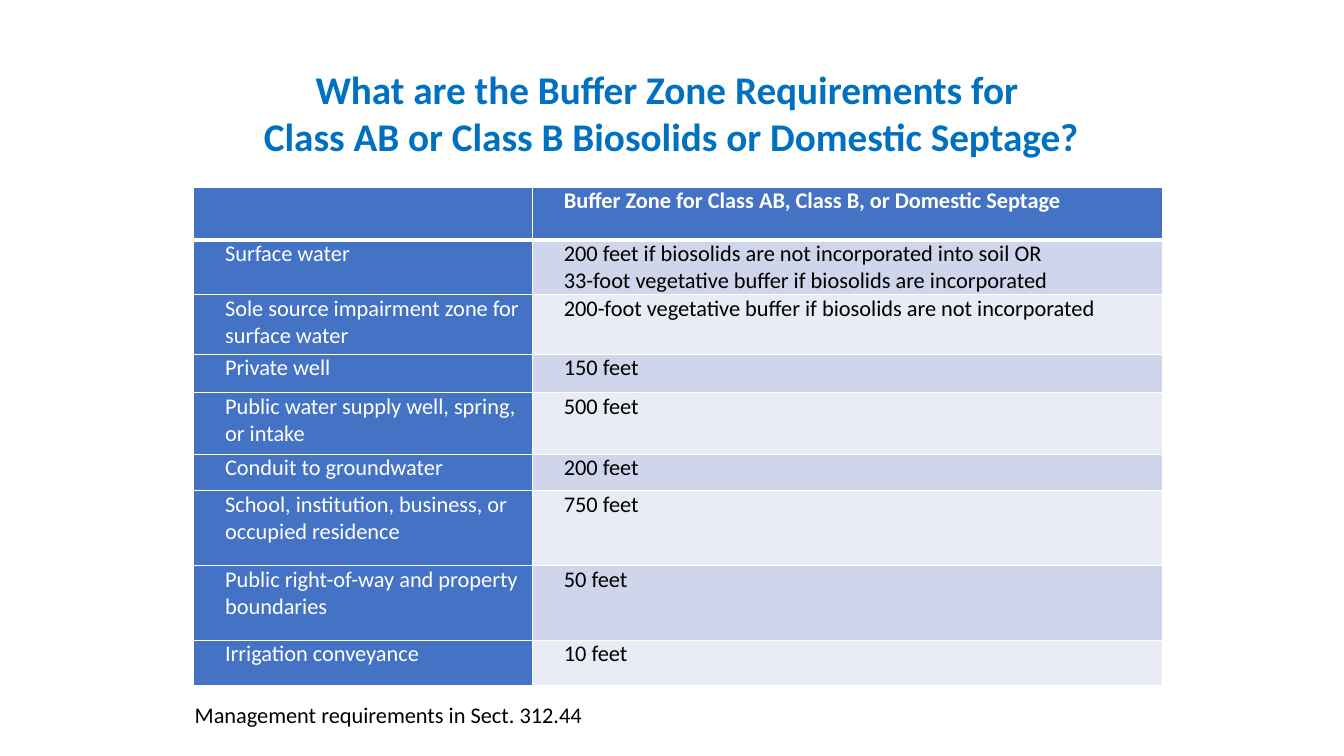
"""Build the slide on buffer zone requirements."""
from lxml import etree
from pptx import Presentation
from pptx.dml.color import RGBColor
from pptx.enum.text import MSO_ANCHOR, MSO_AUTO_SIZE, PP_ALIGN
from pptx.oxml.ns import qn
from pptx.util import Pt

MIDDLE, TOP = MSO_ANCHOR.MIDDLE, MSO_ANCHOR.TOP
FIXED = MSO_AUTO_SIZE.NONE
CENTER, LEFT = PP_ALIGN.CENTER, PP_ALIGN.LEFT

FONT = "Calibri"
WHITE, BLACK, AZURE, BLUE = "FFFFFF", "000000", "0070C0", "4472C4"
BANDS = ["CFD5EA", "E9EBF5"]

TITLE = ["What are the Buffer Zone Requirements for ",
         "Class AB or Class B Biosolids or Domestic Septage?"]
NOTE = "Management requirements in Sect. 312.44"
ROWS = [
    (38, "", ["Buffer Zone for Class AB, Class B, or Domestic Septage"]),
    (38, "Surface water",
     ["200 feet if biosolids are not incorporated into soil OR",
      "33-foot vegetative buffer if biosolids are incorporated"]),
    (42.5, "Sole source impairment zone for surface water",
     ["200-foot vegetative buffer if biosolids are not incorporated"]),
    (27.5, "Private well", ["150 feet"]),
    (44, "Public water supply well, spring, or intake", ["500 feet"]),
    (26, "Conduit to groundwater", ["200 feet"]),
    (53.5, "School, institution, business, or occupied residence", ["750 feet"]),
    (53.5, "Public right-of-way and property boundaries", ["50 feet"]),
    (32, "Irrigation conveyance", ["10 feet"]),
]
COLS = [242, 450]


def rgb(code):
    """Turn a hex string into a colour."""
    return RGBColor.from_string(code)


def write(para, text, size, color, bold=False):
    """Add one formatted run."""
    run = para.add_run()
    run.text = text
    font = run.font
    font.name, font.size, font.bold = FONT, Pt(size), bold
    font.color.rgb = rgb(color)


def edge(cell, low):
    """Draw white borders, with the given width below."""
    props = cell._tc.get_or_add_tcPr()
    for i, (side, width) in enumerate([("L", 1), ("R", 1), ("T", 1), ("B", low)]):
        line = etree.Element(qn("a:ln" + side), w=str(Pt(width)))
        fill = etree.SubElement(line, qn("a:solidFill"))
        etree.SubElement(fill, qn("a:srgbClr"), val=WHITE)
        props.insert(i, line)


def fill_cell(cell, lines, back, color, head):
    """Set the text, fill and borders of a cell."""
    cell.fill.solid()
    cell.fill.fore_color.rgb = rgb(back)
    cell.margin_left = cell.margin_right = Pt(5)
    cell.margin_top = cell.margin_bottom = 0
    cell.vertical_anchor = TOP
    frame = cell.text_frame
    for i, text in enumerate(lines):
        para = frame.add_paragraph() if i else frame.paragraphs[0]
        para.alignment = LEFT
        props = para._p.get_or_add_pPr()
        props.set("marL", str(Pt(17.3)))
        props.set("indent", "0")
        if text:
            write(para, text, 16, color, head)
    edge(cell, 3 if head else 1)


def add_title(slide):
    """Place and fill the title."""
    title = slide.shapes.title
    title.left, title.top, title.width, title.height = map(Pt, (68.4, 42.5, 822, 75))
    frame = title.text_frame
    frame.auto_size, frame.vertical_anchor = FIXED, MIDDLE
    para = frame.paragraphs[0]
    para.alignment = CENTER
    for i, text in enumerate(TITLE):
        if i:
            para.add_line_break()
        write(para, text, 28, AZURE, True)


def add_grid(slide):
    """Add the table of buffer zones."""
    high = sum(row[0] for row in ROWS)
    table = slide.shapes.add_table(len(ROWS), len(COLS), Pt(138.5), Pt(133.5),
                                   Pt(sum(COLS)), Pt(high)).table
    for col, width in zip(table.columns, COLS):
        col.width = Pt(width)
    for i, (height, place, zone) in enumerate(ROWS):
        table.rows[i].height = Pt(height)
        head = i == 0
        back, color = (BLUE, WHITE) if head else (BANDS[(i - 1) % 2], BLACK)
        fill_cell(table.cell(i, 0), [place], BLUE, WHITE, head)
        fill_cell(table.cell(i, 1), zone, back, color, head)


def add_note(slide):
    """Add the line below the table."""
    box = slide.shapes.add_textbox(Pt(132), Pt(497.5), Pt(520.5), Pt(26.6))
    box.text_frame.word_wrap = True
    write(box.text_frame.paragraphs[0], NOTE, 16, BLACK)


def main():
    """Build and save the slide."""
    deck = Presentation()
    deck.slide_width, deck.slide_height = Pt(960), Pt(540)
    slide = deck.slides.add_slide(deck.slide_layouts[5])
    add_title(slide)
    add_grid(slide)
    add_note(slide)
    deck.save("out.pptx")


if __name__ == "__main__":
    main()
